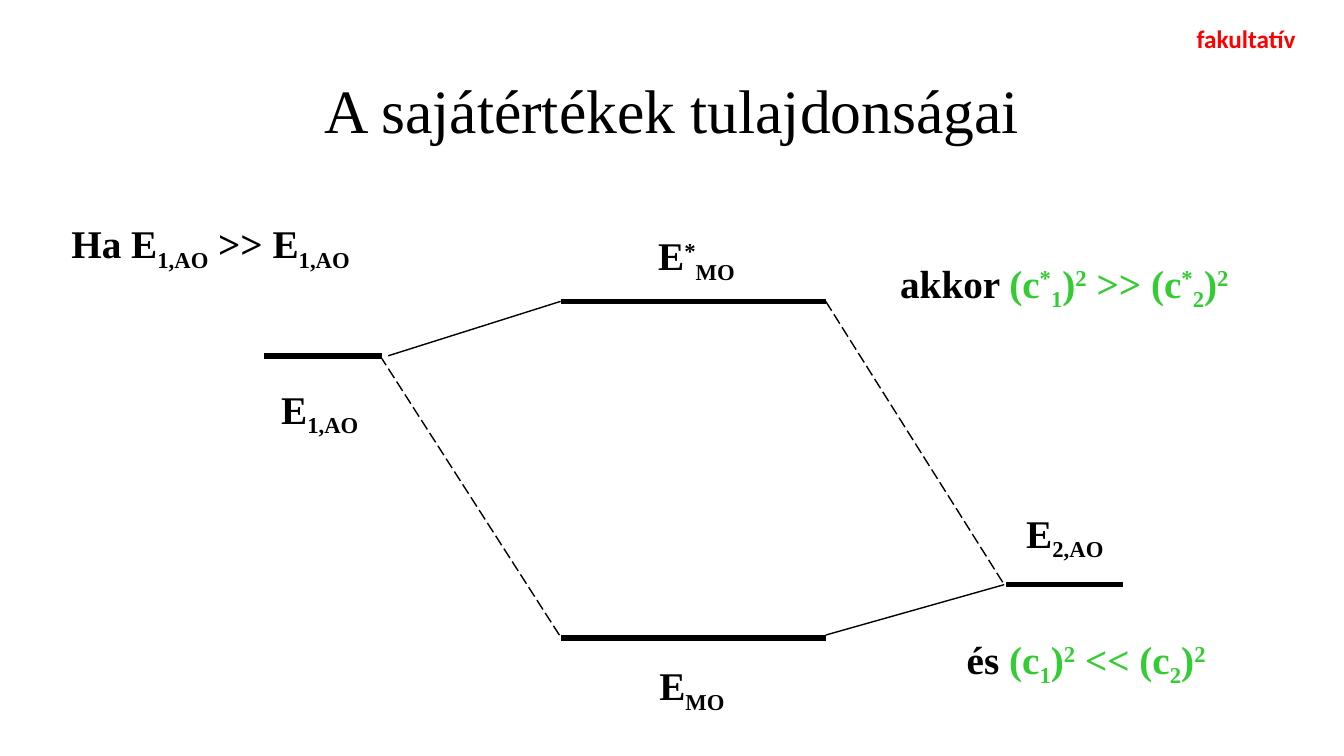
from dataclasses import dataclass

from lxml.etree import SubElement
from pptx import Presentation
from pptx.dml.color import RGBColor
from pptx.enum.dml import MSO_LINE
from pptx.enum.shapes import MSO_CONNECTOR
from pptx.enum.text import MSO_ANCHOR, MSO_AUTO_SIZE, PP_ALIGN
from pptx.oxml.ns import qn
from pptx.util import Emu, Pt

PX = 9144
BASELINES = {"_": "-25000", "^": "30000"}


def px(length):
    return Emu(length * PX)


@dataclass(frozen=True)
class Theme:
    ink: str = "000000"
    accent: str = "33CC33"
    alert: str = "FF0000"
    serif: str = "Times New Roman"
    sans: str = "Calibri"
    title_size: int = 44
    formula_size: int = 28
    tag_size: int = 18
    level_width: int = 4
    link_width: int = 1


def add_text(para, text, *, font, size, color, bold=False):
    """Add runs split at |, where a leading _ lowers and ^ raises a run."""
    for part in text.split("|"):
        span = para.add_run()
        baseline = BASELINES.get(part[0])
        span.text = part[1:] if baseline else part
        span.font.name = font
        span.font.size = Pt(size)
        span.font.bold = bold
        span.font.color.rgb = RGBColor.from_string(color)
        if baseline:
            span.font._element.set("baseline", baseline)


class EnergyDiagram:
    def __init__(self, deck, theme):
        self.theme = theme
        self.page = deck.slides.add_slide(deck.slide_layouts[5])

    def title(self, text, left, top, width, height):
        box = self.page.shapes.title
        box.left, box.top, box.width, box.height = map(px, (left, top, width, height))
        box.text_frame.vertical_anchor = MSO_ANCHOR.MIDDLE
        para = box.text_frame.paragraphs[0]
        para.alignment = PP_ALIGN.CENTER
        para.line_spacing = 0.9
        add_text(para, text, font=self.theme.serif, size=self.theme.title_size,
                 color=self.theme.ink)

    def box(self, left, top, width, height, wrap):
        box = self.page.shapes.add_textbox(*map(px, (left, top, width, height)))
        box.text_frame.word_wrap = wrap
        box.text_frame.auto_size = MSO_AUTO_SIZE.SHAPE_TO_FIT_TEXT
        return box.text_frame.paragraphs[0]

    def formula(self, text, left, top, width, accent="", wrap=False):
        para = self.box(left, top, width, 57, wrap)
        for part, color in ((text, self.theme.ink), (accent, self.theme.accent)):
            if part:
                add_text(para, part, font=self.theme.serif,
                         size=self.theme.formula_size, color=color, bold=True)

    def tag(self, text, left, top, width, height):
        add_text(self.box(left, top, width, height, False), text,
                 font=self.theme.sans, size=self.theme.tag_size,
                 color=self.theme.alert, bold=True)

    def line(self, start, end, width, dashed=False):
        line = self.page.shapes.add_connector(
            MSO_CONNECTOR.STRAIGHT, *map(px, (*start, *end)))
        line.line.color.rgb = RGBColor.from_string(self.theme.ink)
        line.line.width = Pt(width)
        if dashed:
            line.line.dash_style = MSO_LINE.LONG_DASH
        SubElement(line._element.spPr, qn("a:effectLst"))

    def level(self, left, right, height):
        self.line((left, height), (right, height), self.theme.level_width)

    def link(self, start, end, dashed=False):
        self.line(start, end, self.theme.link_width, dashed)


def main():
    deck = Presentation()
    deck.slide_width, deck.slide_height = px(1333), px(750)
    diagram = EnergyDiagram(deck, Theme())

    diagram.title("A sajátértékek tulajdonságai", 92, 40, 1150, 145)

    for left, right, height in (
        (262, 379, 353), (998, 1114, 580), (556, 819, 633), (556, 819, 299),
    ):
        diagram.level(left, right, height)

    diagram.link((385, 353), (556, 299))
    diagram.link((377, 353), (558, 635), dashed=True)
    diagram.link((819, 299), (996, 580), dashed=True)
    diagram.link((819, 630), (996, 580))

    diagram.formula("akkor ", 883, 252, 403, wrap=True,
                    accent="(c|^*|_1|)|^2| >> (c|^*|_2|)|^2")
    diagram.formula("és ", 949, 625, 303, wrap=True,
                    accent="(c|_1|)|^2| << (c|_2|)|^2")
    diagram.formula("Ha E|_1,AO| >> E|_1,AO", 61, 213, 345, wrap=True)

    for text, left, top, width in (
        ("E|_1,AO", 269, 377, 105),
        ("E|_2,AO", 1008, 500, 105),
        ("E|_MO", 644, 651, 91),
        ("E|^*|_MO", 643, 225, 104),
    ):
        diagram.formula(text, left, top, width)

    diagram.tag("fakultatív", 1177, 18, 119, 40)
    deck.save("out.pptx")


if __name__ == "__main__":
    main()
